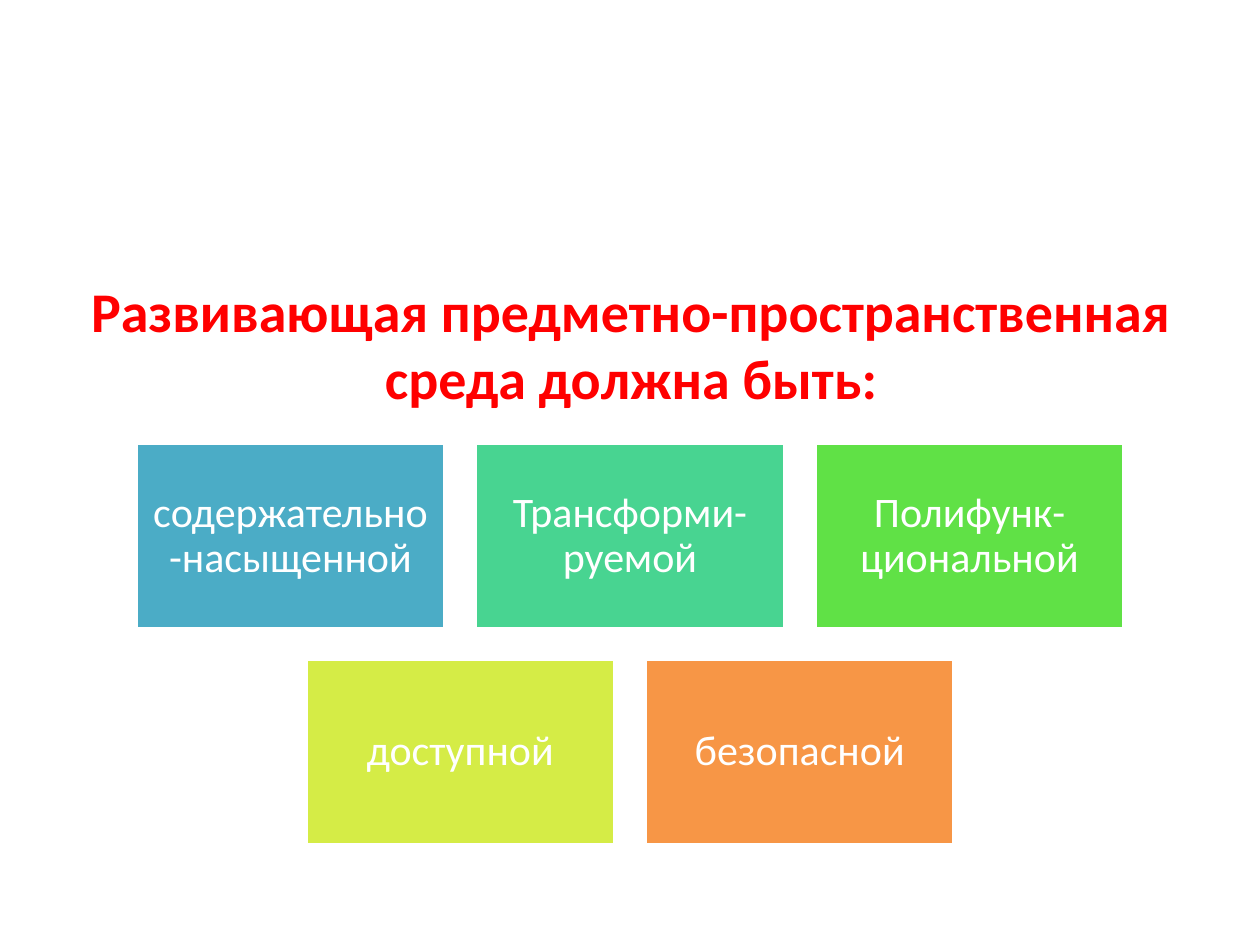
from dataclasses import dataclass

from pptx import Presentation
from pptx.dml.color import RGBColor
from pptx.enum.shapes import MSO_SHAPE
from pptx.enum.text import MSO_ANCHOR, PP_ALIGN
from pptx.util import Inches, Pt

RECT = MSO_SHAPE.RECTANGLE
MIDDLE = MSO_ANCHOR.MIDDLE
CENTER = PP_ALIGN.CENTER

SLIDE_W, SLIDE_H = 10, 7.5
CARD_W, CARD_H = 2.45, 1.47
GAP = 0.1 * CARD_W
GRID_TOP = 3.52


@dataclass(frozen=True)
class Theme:
    font: str = "Calibri"
    title: str = "FF0000"
    light: str = "FFFFFF"
    title_size: int = 32
    card_size: int = 24
    line_width: int = 2


@dataclass(frozen=True)
class Card:
    text: str
    fill: str


THEME = Theme()
TITLE = "Развивающая предметно-пространственная среда должна быть:"
ROWS = (
    (
        Card("содержательно-насыщенной", "4BACC6"),
        Card("Трансформи-руемой", "48D491"),
        Card("Полифунк-циональной", "60E146"),
    ),
    (
        Card("доступной", "D5EC46"),
        Card("безопасной", "F79646"),
    ),
)


def write(sp, text: str, size: int, color: str, bold: bool = False,
          spacing: float = 1.0) -> None:
    """Put one centred paragraph into a shape."""
    tf = sp.text_frame
    tf.word_wrap = True
    tf.vertical_anchor = MIDDLE
    p = tf.paragraphs[0]
    p.alignment = CENTER
    p.line_spacing = spacing
    r = p.add_run()
    r.text = text
    font_format = {"name": THEME.font, "size": Pt(size), "bold": bold}
    for name, value in font_format.items():
        setattr(r.font, name, value)
    r.font.color.rgb = RGBColor.from_string(color)


def add_title(s) -> None:
    sp = s.shapes.add_textbox(Inches(0.51), Inches(0.28 * SLIDE_H),
                              Inches(0.9 * SLIDE_W), Inches(1.25))
    write(sp, TITLE, THEME.title_size, THEME.title, bold=True)


def add_card(s, card: Card, left: float, top: float) -> None:
    sp = s.shapes.add_shape(RECT, Inches(left), Inches(top),
                            Inches(CARD_W), Inches(CARD_H))
    sp.shadow.inherit = False
    sp.fill.solid()
    sp.fill.fore_color.rgb = RGBColor.from_string(card.fill)
    sp.line.color.rgb = RGBColor.from_string(THEME.light)
    sp.line.width = Pt(THEME.line_width)
    for side in ("left", "top", "right", "bottom"):
        setattr(sp.text_frame, f"margin_{side}", Inches(0.1))
    write(sp, card.text, THEME.card_size, THEME.light, spacing=0.9)


def add_cards(s) -> None:
    """Lay out the cards row by row, each row centred on the slide."""
    for row, cards in enumerate(ROWS):
        row_w = len(cards) * (CARD_W + GAP) - GAP
        left = (SLIDE_W - row_w) / 2
        top = GRID_TOP + row * (CARD_H + GAP)
        for col, card in enumerate(cards):
            add_card(s, card, left + col * (CARD_W + GAP), top)


def main() -> None:
    prs = Presentation()
    prs.slide_width, prs.slide_height = Inches(SLIDE_W), Inches(SLIDE_H)
    s = prs.slides.add_slide(prs.slide_layouts[6])
    add_title(s)
    add_cards(s)
    prs.save("out.pptx")


if __name__ == "__main__":
    main()
